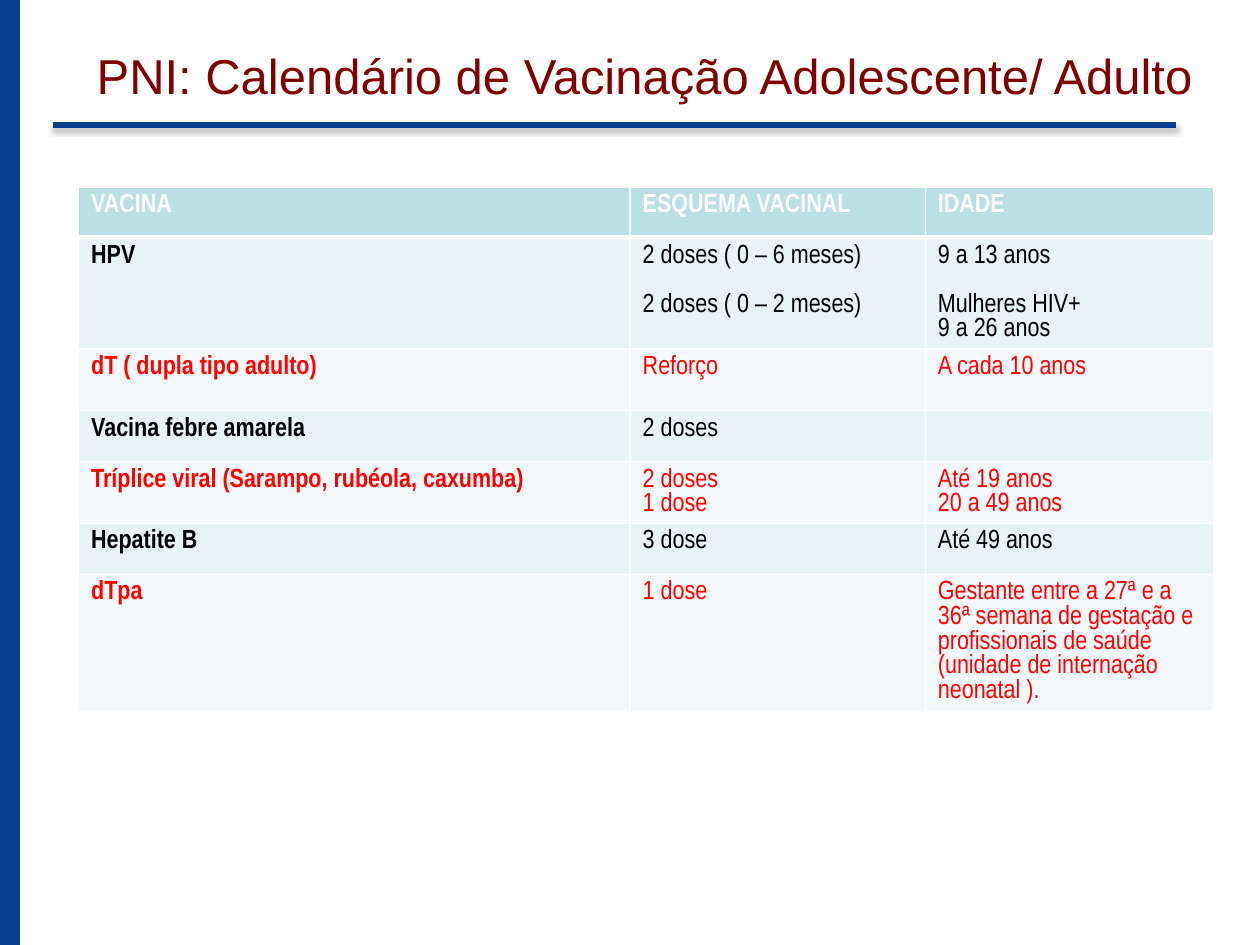
from dataclasses import dataclass

from lxml.etree import SubElement
from pptx import Presentation
from pptx.dml.color import RGBColor
from pptx.enum.shapes import MSO_CONNECTOR, MSO_SHAPE
from pptx.enum.text import MSO_ANCHOR, MSO_AUTO_SIZE, PP_ALIGN
from pptx.oxml.ns import qn
from pptx.util import Pt

COLORS = {
    "blue": "083E8E", "maroon": "800000", "white": "FFFFFF",
    "black": "000000", "red": "FF0000",
    "header": "BBE0E3", "band": "E7F3F4", "light": "F3F9FA",
}
COLUMN_WIDTHS = (315.2, 168.7, 164.8)


@dataclass
class VaccineRow:
    height: float
    cells: tuple[str, str, str]
    gap: float = 0  # space between the first and second lines


HEADER = VaccineRow(29, ("VACINA", "ESQUEMA VACINAL", "IDADE"))
VACCINES = [
    VaccineRow(63.6, ("HPV", "2 doses ( 0 – 6 meses)\n2 doses ( 0 – 2 meses)",
                      "9 a 13 anos\nMulheres HIV+\n9 a 26 anos"), gap=14),
    VaccineRow(35.2, ("dT ( dupla tipo adulto)", "Reforço", "A cada 10 anos")),
    VaccineRow(29.2, ("Vacina febre amarela", "2 doses", "")),
    VaccineRow(35.2, ("Tríplice viral (Sarampo, rubéola, caxumba)",
                      "2 doses\n1 dose", "Até 19 anos\n20 a 49 anos")),
    VaccineRow(29.2, ("Hepatite B", "3 dose", "Até 49 anos")),
    VaccineRow(77.6, ("dTpa", "1 dose",
                      "Gestante entre a 27ª e a 36ª semana de gestação e "
                      "profissionais de saúde (unidade de internação neonatal ).")),
]


def rgb(name: str) -> RGBColor:
    return RGBColor.from_string(COLORS[name])


def write_text(frame, text: str, *, font: str, size: float, color: str,
               bold: bool = False, align=PP_ALIGN.LEFT, gap: float = 0) -> None:
    """Fill a text frame, one paragraph per line of text."""
    for index, line in enumerate(text.split("\n")):
        para = frame.add_paragraph() if index else frame.paragraphs[0]
        para.alignment = align
        para.line_spacing = 1.0
        para.space_before = Pt(gap if index == 1 else 0)
        para.font.size = Pt(size)
        if line:
            span = para.add_run()
            span.text = line
            span.font.name = font
            span.font.size = Pt(size)
            span.font.bold = bold
            span.font.color.rgb = rgb(color)


def set_borders(cell, *, bottom: float = 1) -> None:
    """Draw white cell borders; they must precede the cell fill."""
    properties = cell._tc.get_or_add_tcPr()
    for side, width in (("L", 1), ("R", 1), ("T", 1), ("B", bottom)):
        line = SubElement(properties, qn(f"a:ln{side}"), w=str(Pt(width)))
        fill = SubElement(line, qn("a:solidFill"))
        SubElement(fill, qn("a:srgbClr"), val=COLORS["white"])


def fill_row(table, index: int, row: VaccineRow, *, fill: str, color: str) -> None:
    is_header = index == 0
    table.rows[index].height = Pt(row.height)
    for column, text in enumerate(row.cells):
        cell = table.cell(index, column)
        set_borders(cell, bottom=3 if is_header else 1)
        cell.fill.solid()
        cell.fill.fore_color.rgb = rgb(fill)
        write_text(cell.text_frame, text, font="Arial Narrow", size=15, color=color,
                   bold=is_header or column == 0, gap=row.gap)


def add_shadowed_line(page, left: float, right: float, y: float) -> None:
    line = page.shapes.add_connector(
        MSO_CONNECTOR.STRAIGHT, Pt(left), Pt(y), Pt(right), Pt(y))
    line.line.color.rgb = rgb("blue")
    line.line.width = Pt(3)
    effects = SubElement(line._element.spPr, qn("a:effectLst"))
    shadow = SubElement(effects, qn("a:outerShdw"), blurRad=str(Pt(3.1)),
                        dist=str(Pt(1.8)), dir="5400000", rotWithShape="0")
    tint = SubElement(shadow, qn("a:srgbClr"), val=COLORS["black"])
    SubElement(tint, qn("a:alpha"), val="35000")


def main() -> None:
    deck = Presentation()
    deck.slide_width, deck.slide_height = Pt(720), Pt(540)
    page = deck.slides.add_slide(deck.slide_layouts[5])

    # Side bar and title rule
    bar = page.shapes.add_shape(MSO_SHAPE.RECTANGLE, 0, 0, Pt(11.4), Pt(540))
    bar.shadow.inherit = False
    bar.fill.solid()
    bar.fill.fore_color.rgb = rgb("blue")
    bar.line.fill.background()
    add_shadowed_line(page, 30.2, 672, 71.5)

    # Title
    title = page.shapes.title
    title.left, title.top, title.width, title.height = (
        Pt(28), Pt(22.5), Pt(680.4), Pt(67.7))
    title.text_frame.word_wrap = True
    title.text_frame.auto_size = MSO_AUTO_SIZE.NONE
    title.text_frame.vertical_anchor = MSO_ANCHOR.TOP
    write_text(title.text_frame, "PNI: Calendário de Vacinação Adolescente/ Adulto",
               font="Arial", size=28, color="maroon", align=PP_ALIGN.CENTER)

    # Vaccination table
    rows = [HEADER, *VACCINES]
    table = page.shapes.add_table(
        len(rows), len(COLUMN_WIDTHS), Pt(44.9), Pt(106.9),
        Pt(sum(COLUMN_WIDTHS)), Pt(sum(row.height for row in rows))).table
    for column, width in zip(table.columns, COLUMN_WIDTHS):
        column.width = Pt(width)
    fill_row(table, 0, HEADER, fill="header", color="white")
    for index, row in enumerate(VACCINES, start=1):
        odd = index % 2 == 1
        fill_row(table, index, row, fill="band" if odd else "light",
                 color="black" if odd else "red")

    deck.save("out.pptx")


if __name__ == "__main__":
    main()
